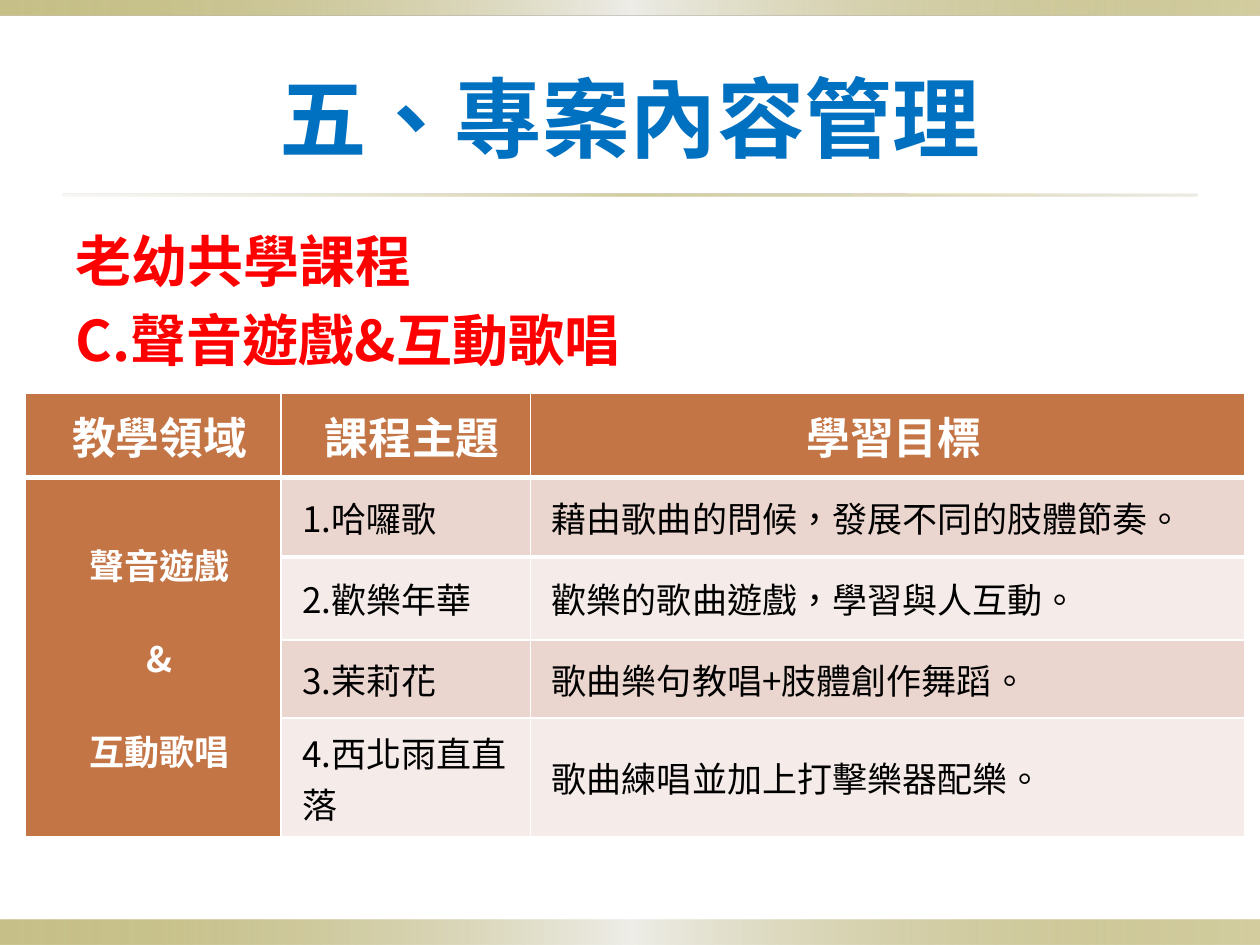
"""Build a slide on the sound games and singing course with a table of lessons."""
from lxml import etree
from pptx import Presentation
from pptx.dml.color import RGBColor
from pptx.enum.shapes import MSO_SHAPE
from pptx.enum.text import MSO_ANCHOR, PP_ALIGN
from pptx.oxml import parse_xml
from pptx.oxml.ns import nsdecls, qn
from pptx.util import Inches, Pt

RECTANGLE = MSO_SHAPE.RECTANGLE
MIDDLE = MSO_ANCHOR.MIDDLE
CENTER, LEFT = PP_ALIGN.CENTER, PP_ALIGN.LEFT
FONT = "Noto Sans CJK SC"
COLORS = {
    "title": "0070C0", "body": "FF0000", "header": "C47546",
    "odd_row": "EAD6CF", "even_row": "F5ECE9", "white": "FFFFFF",
    "black": "000000", "olive": "918415", "pale": "EEEDE8", "sand": "DCD9CC",
}


def write_lines(frame, lines, size, color, bold, align, before, after=0, indent=0):
    frame.word_wrap = True
    for index, line in enumerate(lines):
        paragraph = frame.paragraphs[0] if index == 0 else frame.add_paragraph()
        paragraph.text = line
        paragraph.alignment = align
        paragraph.space_before, paragraph.space_after = Pt(before), Pt(after)
        font = paragraph.font
        font.name, font.size, font.bold = FONT, Pt(size), bold
        font.color.rgb = RGBColor.from_string(COLORS[color])
        properties = paragraph._p.get_or_add_pPr()
        properties.set("marL", str(Inches(indent)))
        default = properties.find(qn("a:defRPr"))
        default.set("lang", "zh-TW")
        etree.SubElement(default, qn("a:ea")).set("typeface", FONT)


def add_band(left, top, width, height, stops):
    shape = slide.shapes.add_shape(
        RECTANGLE, Inches(left), Inches(top), Inches(width), Inches(height))
    shape.shadow.inherit = False
    shape.line.fill.background()
    stop_xml = "".join(
        f'<a:gs pos="{position * 1000}"><a:srgbClr val="{COLORS[color]}">'
        f'<a:alpha val="{opacity * 1000}"/></a:srgbClr></a:gs>'
        for position, color, opacity in stops)
    gradient = parse_xml(
        f'<a:gradFill {nsdecls("a")} rotWithShape="1"><a:gsLst>{stop_xml}</a:gsLst>'
        '<a:lin ang="0" scaled="0"/></a:gradFill>')
    shape._element.spPr.find(qn("a:prstGeom")).addnext(gradient)


presentation = Presentation()
presentation.slide_width, presentation.slide_height = Inches(10), Inches(7.5)
slide = presentation.slides.add_slide(presentation.slide_layouts[6])

edge_stops = [(0, "olive", 50), (50, "pale", 100), (100, "olive", 40)]
rule_stops = [(0, "sand", 20), (50, "olive", 40), (100, "sand", 50)]
add_band(0, 7.3, 10, 0.2, edge_stops)
add_band(0, 0, 10, 0.12, edge_stops)
add_band(0.5, 1.54, 9, 0.02, rule_stops)

title = slide.shapes.add_textbox(Inches(0.5), Inches(0.3), Inches(9), Inches(1.25))
title.text_frame.vertical_anchor = MIDDLE
write_lines(title.text_frame, ["五、專案內容管理"], 50, "title", True, CENTER, 0)

body = slide.shapes.add_textbox(Inches(0.5), Inches(1.75), Inches(9), Inches(5.13))
write_lines(body.text_frame, ["老幼共學課程", "C.聲音遊戲&互動歌唱"],
            32, "body", True, LEFT, 6.4)

rows = [
    ("教學領域", "課程主題", "學習目標"),
    ("聲音遊戲\n&\n互動歌唱", "1.哈囉歌", "藉由歌曲的問候，發展不同的肢體節奏。"),
    ("", "2.歡樂年華", "歡樂的歌曲遊戲，學習與人互動。"),
    ("", "3.茉莉花", "歌曲樂句教唱+肢體創作舞蹈。"),
    ("", "4.西北雨直直落", "歌曲練唱並加上打擊樂器配樂。"),
]
column_widths = [2.03, 1.98, 5.67]
row_heights = [0.67, 0.63, 0.66, 0.62, 0.94]
header_edges = {0: "lnB", 1: "lnT"}
table = slide.shapes.add_table(
    len(rows), len(column_widths), Inches(0.2), Inches(3.12),
    Inches(sum(column_widths)), Inches(sum(row_heights))).table
table.first_col = True
for column, width in zip(table.columns, column_widths):
    column.width = Inches(width)
for row, height in zip(table.rows, row_heights):
    row.height = Inches(height)
table.cell(1, 0).merge(table.cell(4, 0))

for row_index, texts in enumerate(rows):
    for column_index, text in enumerate(texts):
        cell = table.cell(row_index, column_index)
        heading = row_index == 0 or column_index == 0
        fill = "header" if heading else "odd_row" if row_index % 2 else "even_row"
        cell.fill.solid()
        cell.fill.fore_color.rgb = RGBColor.from_string(COLORS[fill])
        if row_index in header_edges:
            edge = header_edges[row_index]
            cell._tc.get_or_add_tcPr().insert(0, parse_xml(
                f'<a:{edge} {nsdecls("a")} w="{Pt(3)}"><a:solidFill>'
                f'<a:srgbClr val="{COLORS["white"]}"/></a:solidFill></a:{edge}>'))
        if not text:
            continue
        cell.vertical_anchor = MIDDLE
        cell.margin_left = cell.margin_right = Inches(0.07)
        cell.margin_top = cell.margin_bottom = Inches(0.07)
        write_lines(cell.text_frame, text.split("\n"), 20 if row_index else 25,
                    "white" if heading else "black", heading,
                    CENTER if heading else LEFT, 12, 12, 0.1)

presentation.save("out.pptx")
